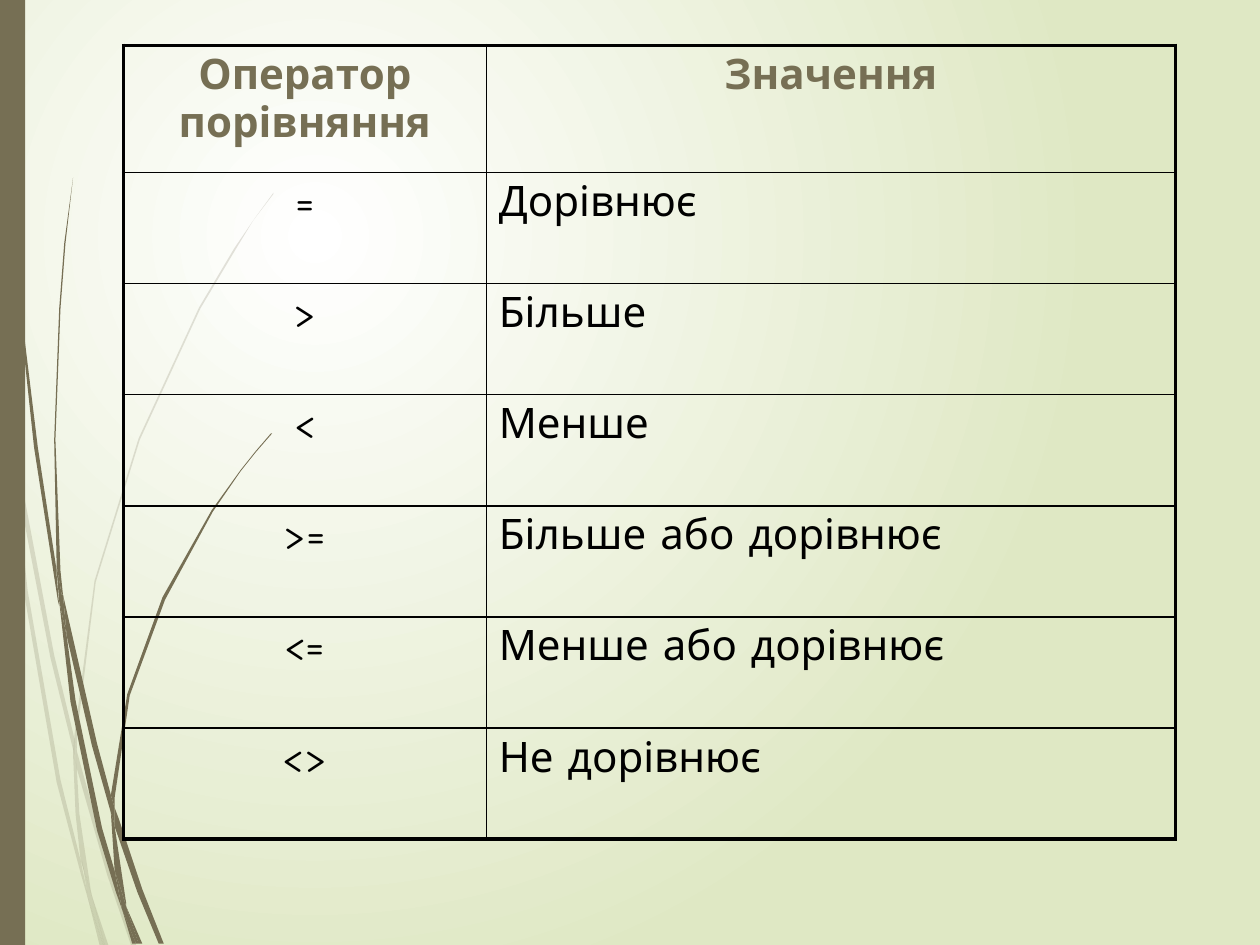
from dataclasses import dataclass

from lxml.etree import SubElement
from pptx import Presentation
from pptx.dml.color import RGBColor
from pptx.enum.shapes import MSO_SHAPE
from pptx.enum.text import PP_ALIGN
from pptx.oxml.ns import qn
from pptx.util import Inches, Pt


@dataclass(frozen=True)
class Theme:
    """Colours, type and line weights of the slide."""
    olive: str = "766F54"
    pale_green: str = "DFE8C4"
    white: str = "FFFFFF"
    black: str = "000000"
    font: str = "Comic Neue"
    text_size: float = 24
    outer_rule: float = 2.25
    inner_rule: float = 1
    faint_alpha: int = 20


THEME = Theme()
WIDTH, HEIGHT = Inches(10), Inches(7.5)
HUNDREDTH = Inches(0.01)

HEADINGS = ("Оператор порівняння", "Значення")
OPERATORS = (
    ("=", "Дорівнює"),
    (">", "Більше"),
    ("<", "Менше"),
    (">=", "Більше або дорівнює"),
    ("<=", "Менше або дорівнює"),
    ("<>", "Не дорівнює"),
)

FAINT_STEMS = (
    ((8, 350), (6, 322), (0, 282), (0, 299), (7, 344)),
    ((40, 522), (59, 599), (59, 586), (43, 520), (10, 345), (12, 376)),
    ((64, 607), (61, 596), (61, 610), (85, 694), (104, 750), (108, 750), (88, 692)),
    ((83, 750), (86, 750), (73, 711)),
    ((64, 683), (48, 619), (22, 469), (12, 376), (8, 350), (19, 470), (45, 621),
     (64, 693), (70, 714), (69, 707)),
    ((58, 599), (60, 646), (64, 683), (67, 692), (73, 711), (72, 706), (63, 646),
     (61, 610), (61, 608)),
    ((61, 584), (76, 462), (111, 349), (159, 245), (187, 198), (201, 175), (217, 154),
     (217, 153), (201, 175), (186, 197), (158, 244), (110, 348), (75, 461), (59, 584),
     (59, 586), (61, 596)),
    ((70, 714), (79, 750), (82, 750)),
    ((61, 608), (61, 610), (61, 596), (59, 586), (58, 599)),
    ((67, 692), (65, 683), (69, 707), (70, 714), (82, 750), (83, 750), (73, 711)),
)

STRONG_STEMS = (
    ((5, 110), (14, 233), (27, 355), (46, 477), (47, 481), (45, 457), (45, 453),
     (30, 355), (15, 232), (6, 109), (4, 48), (3, 0), (2, 0), (3, 48)),
    ((73, 592), (88, 645), (88, 633), (88, 631), (77, 590), (50, 472), (53, 505)),
    ((94, 649), (91, 641), (91, 656), (109, 708), (126, 749), (130, 749), (113, 706)),
    ((91, 691), (81, 657), (60, 556), (53, 505), (47, 477), (56, 557), (77, 659),
     (92, 708), (97, 722), (96, 717)),
    ((50, 472), (48, 453), (44, 349), (48, 245), (52, 193), (58, 141), (51, 193),
     (47, 245), (43, 349), (45, 449), (49, 472)),
    ((110, 749), (113, 749), (100, 719)),
    ((47, 477), (53, 505), (50, 472), (49, 472), (45, 449), (45, 453)),
    ((91, 633), (103, 552), (131, 476), (169, 406), (191, 374), (203, 359), (216, 344),
     (215, 344), (203, 358), (191, 373), (168, 405), (129, 474), (101, 551), (88, 631),
     (91, 641)),
    ((97, 722), (105, 749), (108, 749)),
    ((88, 645), (91, 691), (96, 706), (100, 719), (100, 716), (91, 656), (90, 651)),
    ((88, 645), (90, 651), (91, 656), (91, 641), (88, 631), (88, 633)),
    ((96, 706), (91, 691), (96, 717), (97, 722), (108, 749), (110, 749), (100, 719)),
)


def paint_background(slide):
    """Fill the slide with a round gradient centred in its upper left."""
    fill = slide.background.fill
    fill.gradient()
    for stop, color in zip(fill.gradient_stops, (THEME.white, THEME.pale_green)):
        stop.color.rgb = RGBColor.from_string(color)
    gradient = next(slide.element.iter(qn("a:gradFill")))
    gradient.remove(gradient.find(qn("a:lin")))
    circle = SubElement(gradient, qn("a:path"), path="circle")
    SubElement(circle, qn("a:fillToRect"), l="50000", t="50000", r="100000", b="100000")


def paint_olive(shape):
    """Give a shape a flat olive fill without line or shadow."""
    shape.shadow.inherit = False
    shape.fill.solid()
    shape.fill.fore_color.rgb = RGBColor.from_string(THEME.olive)
    shape.line.fill.background()


def add_stem(slide, outline, alpha=100):
    """Draw one piece of a grass stem from an outline in hundredths of an inch."""
    start, *rest = outline
    builder = slide.shapes.build_freeform(*start, scale=HUNDREDTH)
    builder.add_line_segments(rest, close=True)
    stem = builder.convert_to_shape()
    paint_olive(stem)
    if alpha < 100:
        color = next(stem.element.spPr.iter(qn("a:srgbClr")))
        SubElement(color, qn("a:alpha"), val=str(alpha * 1000))


def add_side_bar(slide):
    """Draw the olive bar along the left edge."""
    bar = slide.shapes.add_shape(MSO_SHAPE.RECTANGLE, 0, 0, int(WIDTH * 0.02), HEIGHT)
    paint_olive(bar)


def rule_cell(cell, outer_sides):
    """Rule the four sides of a cell, heavier on the table's outer sides."""
    properties = cell._tc.get_or_add_tcPr()
    for side in "LRTB":
        weight = THEME.outer_rule if side in outer_sides else THEME.inner_rule
        rule = SubElement(properties, qn(f"a:ln{side}"), w=str(Pt(weight)))
        SubElement(SubElement(rule, qn("a:solidFill")), qn("a:srgbClr"), val=THEME.black)


def write_cell(cell, text, color, bold, alignment):
    """Write one run into an unfilled cell."""
    cell.fill.background()
    paragraph = cell.text_frame.paragraphs[0]
    paragraph.alignment = alignment
    spacing = SubElement(paragraph._p.get_or_add_pPr(), qn("a:spcBef"))
    SubElement(spacing, qn("a:spcPct"), val="20000")
    run = paragraph.add_run()
    run.text = text
    run.font.name = THEME.font
    run.font.size = Pt(THEME.text_size)
    run.font.bold = bold
    run.font.color.rgb = RGBColor.from_string(color)


def add_operator_table(slide):
    """Lay out the comparison operators beside their meanings."""
    rows = (HEADINGS, *OPERATORS)
    last_row = len(rows) - 1
    left, top = int(WIDTH * 0.098), int(HEIGHT * 0.048)
    width, height = int(WIDTH * 0.835), int(HEIGHT * 0.84)
    table = slide.shapes.add_table(len(rows), 2, left, top, width, height).table
    table.first_row = table.horz_banding = False
    table.columns[0].width = Inches(2.88)
    table.columns[1].width = width - table.columns[0].width
    heading_height = Inches(1.01)
    for index, row in enumerate(table.rows):
        row.height = (height - heading_height) // last_row if index else heading_height
    for row_index, texts in enumerate(rows):
        heading = row_index == 0
        ends = ("T" if heading else "") + ("B" if row_index == last_row else "")
        for column, text in enumerate(texts):
            cell = table.cell(row_index, column)
            rule_cell(cell, "LR"[column] + ends)
            centred = heading or column == 0
            write_cell(cell, text, THEME.olive if heading else THEME.black, heading,
                       PP_ALIGN.CENTER if centred else PP_ALIGN.LEFT)


def main():
    """Build and save the slide."""
    deck = Presentation()
    deck.slide_width, deck.slide_height = WIDTH, HEIGHT
    slide = deck.slides.add_slide(deck.slide_layouts[6])
    paint_background(slide)
    for outline in FAINT_STEMS:
        add_stem(slide, outline, THEME.faint_alpha)
    for outline in STRONG_STEMS:
        add_stem(slide, outline)
    add_side_bar(slide)
    add_operator_table(slide)
    deck.save("out.pptx")


if __name__ == "__main__":
    main()
